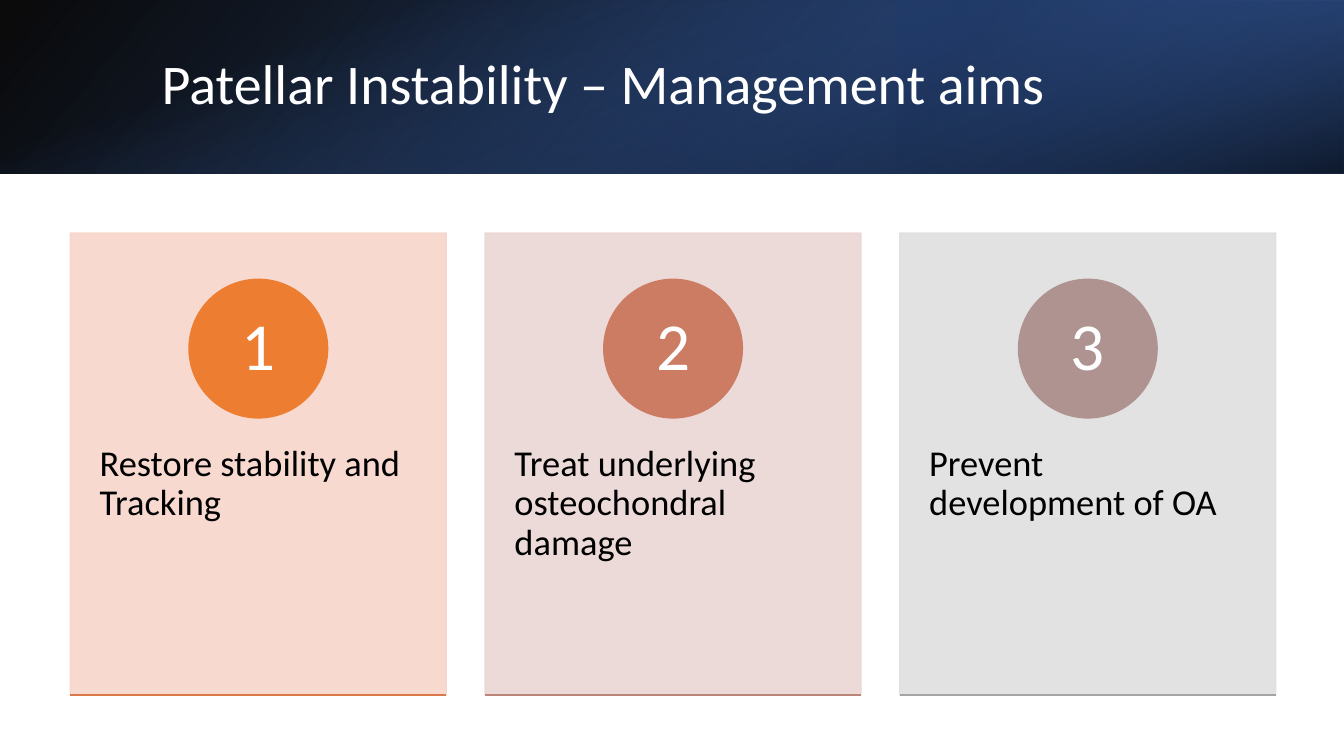
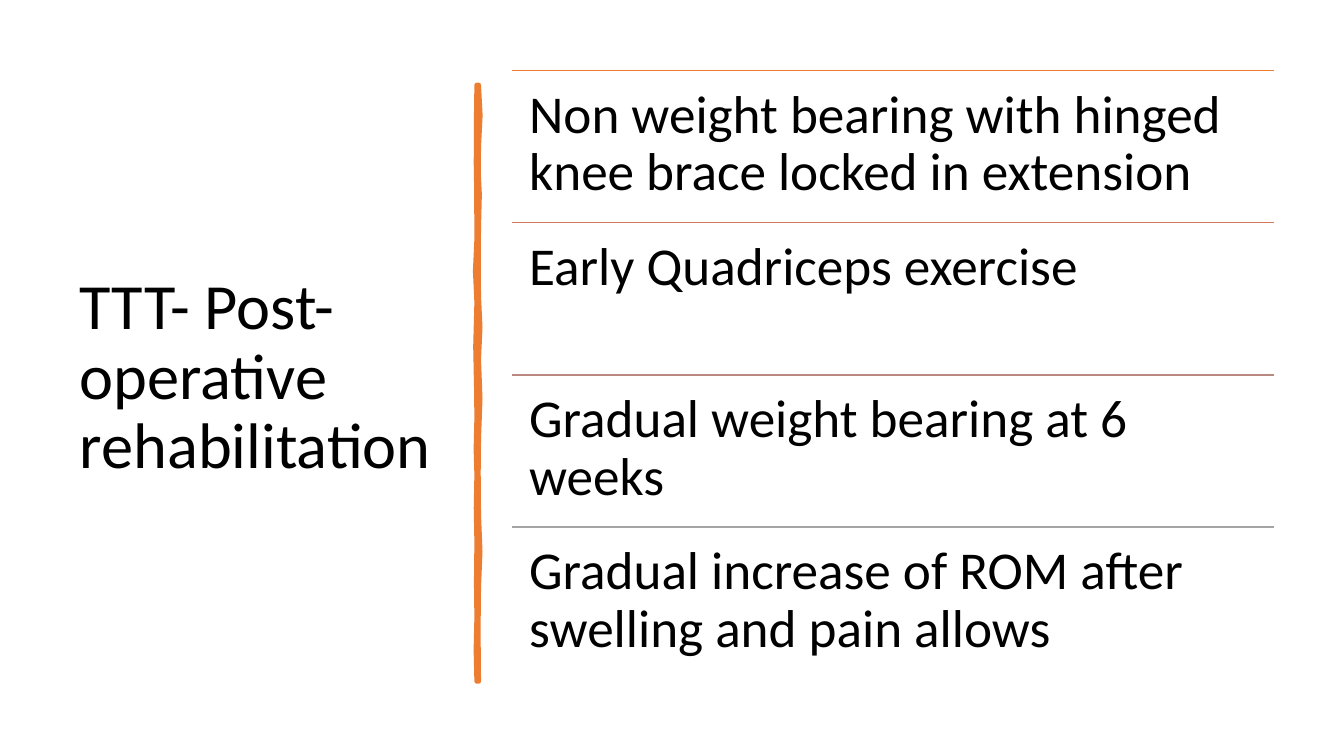
from lxml.etree import SubElement as Sub
from pptx import Presentation
from pptx.dml.color import RGBColor as RGB
from pptx.enum.shapes import MSO_CONNECTOR as Conn, MSO_SHAPE as Kind
from pptx.enum.text import MSO_ANCHOR as Anchor, PP_ALIGN as Align
from pptx.oxml.ns import qn
from pptx.util import Pt

PX = 9525
WIDE, HIGH = 1280, 720
HUES = {
    "black": "000000", "white": "FFFFFF", "orange": "ED7D31",
    "navy": "1F3864", "blue": "2F5496", "sky": "4472C4",
    "peach": "F7D5CB", "rose": "EBD6D4", "mist": "DFDFDF",
    "clay": "CB7C63", "mauve": "AF9390", "grey": "A4A4A4",
    "rust": "DB784A", "brick": "BC857A", "terra": "D07A5B", "dusk": "B88881",
}
FONT = "Calibri"
TITLE = {"anchor": Anchor.MIDDLE, "pads": (10, 5, 10, 5)}

CARDS = [
    ("Restore stability and Tracking", "peach", "orange", "rust"),
    ("Treat underlying osteochondral damage", "rose", "clay", "brick"),
    ("Prevent development of OA", "mist", "mauve", "grey"),
]
STEPS = [
    ("Non weight bearing with hinged knee brace locked in extension", "orange"),
    ("Early Quadriceps exercise", "terra"),
    ("Gradual weight bearing at 6 weeks", "dusk"),
    ("Gradual increase of ROM after swelling and pain allows", "grey"),
]
# Brush edges: (y in px, sway in tenths of a px)
RIGHT = [(0, 0), (29, 15), (59, 0), (84, -2), (104, 8), (136, 0), (169, -2),
         (201, 0), (231, 14), (261, 0), (299, 14), (337, 0), (369, -3),
         (409, 0), (444, 14), (479, 0), (519, -4), (568, 0)]
LEFT = [(568, 0), (538, -7), (507, 0), (474, -4), (436, 0), (403, -6),
        (371, 0), (347, -7), (317, 0), (290, -3), (249, -11), (207, 0),
        (177, -14), (147, 0), (99, -2), (76, -6), (39, -5), (0, 0)]


def hue(name):
    return RGB.from_string(HUES[name])


def emu(*box):
    return [v * PX for v in box]


def write(shape, text, size, color="black", anchor=Anchor.TOP,
          align=Align.LEFT, pads=(0, 0, 0, 0)):
    frame = shape.text_frame
    sides = ("margin_left", "margin_top", "margin_right", "margin_bottom")
    form = dict(zip(sides, emu(*pads)), word_wrap=True, vertical_anchor=anchor)
    para = frame.paragraphs[0]
    run = para.add_run()
    run.text = text
    run.font.color.rgb = hue(color)
    for part, vals in (
        (frame, form),
        (para, {"alignment": align, "line_spacing": 0.9}),
        (run.font, {"name": FONT, "size": Pt(size)}),
    ):
        for key, val in vals.items():
            setattr(part, key, val)


def label(slide, box, text, size, **form):
    write(slide.shapes.add_textbox(*emu(*box)), text, size, **form)


def paint(shape, fill, width=1, alpha=100):
    shape.shadow.inherit = False
    shape.fill.solid()
    shape.fill.fore_color.rgb = hue(fill)
    shape.line.color.rgb = hue(fill)
    shape.line.width = Pt(width)
    if alpha < 100:
        for node in shape._element.spPr.iter(qn("a:srgbClr")):
            Sub(node, qn("a:alpha"), val=str(alpha * 1000))


def rule(slide, x, y, w, color):
    line = slide.shapes.add_connector(Conn.STRAIGHT, *emu(x, y, x + w, y))
    line.line.color.rgb = hue(color)
    line.line.width = Pt(1)
    Sub(line._element.spPr, qn("a:effectLst"))


def fade(slide, box, stops, angle, turn=0, flip=False):
    """Rectangle with a see-through gradient; stops are (place, hue, alpha)."""
    shape = slide.shapes.add_shape(Kind.RECTANGLE, *emu(*box))
    shape.shadow.inherit = False
    shape.line.fill.background()
    shape.rotation = turn
    props = shape._element.spPr
    if flip:
        props.xfrm.set("flipH", "1")
    grad = props.makeelement(qn("a:gradFill"))
    marks = Sub(grad, qn("a:gsLst"))
    for place, name, alpha in stops:
        stop = Sub(marks, qn("a:gs"), pos=str(place * 1000))
        tint = Sub(stop, qn("a:srgbClr"), val=HUES[name])
        Sub(tint, qn("a:alpha"), val=str(alpha * 1000))
    Sub(grad, qn("a:lin"), ang=str(angle * 60000), scaled="0")
    props.find(qn("a:prstGeom")).addnext(grad)


def band(slide, x, y, w, h, text):
    # Three layers of colour; the last is a turned upright strip
    fade(slide, (x, y, w, h), [(0, "black", 96), (100, "blue", 100)],
         140, flip=True)
    third = w // 3
    fade(slide, (x + w - third, y, third, h),
         [(0, "navy", 68), (19, "navy", 68), (100, "sky", 79)],
         320, turn=180, flip=True)
    shift = (w - h) // 2
    fade(slide, (x + shift, y - shift, h, w),
         [(0, "sky", 0), (23, "sky", 0), (99, "black", 74), (100, "black", 74)],
         340, turn=90)
    label(slide, (x + 144, y + 36, 1054, 92), text, 40, color="white", **TITLE)


def card(slide, x, y, w, h, num, text, back, disc, foot):
    panel = slide.shapes.add_shape(Kind.RECTANGLE, *emu(x, y, w, h))
    paint(panel, back, alpha=90)
    label(slide, (x, y + 167, w, 264), text, 26, pads=(28, 35, 30, 35))
    size = 132
    dot = slide.shapes.add_shape(
        Kind.OVAL, *emu(x + (w - size) // 2, y + 44, size, size))
    paint(dot, disc)
    write(dot, str(num), 48, "white", Anchor.MIDDLE, Align.CENTER)
    rule(slide, x, y + h, w, foot)


def brush(slide, x, y, w):
    pts = [(w * 10 + sway, down * 10) for down, sway in RIGHT]
    pts += [(sway, down * 10) for down, sway in LEFT]
    pen = slide.shapes.build_freeform(*pts[0], scale=PX / 10)
    pen.add_line_segments(pts[1:], close=True)
    shape = pen.convert_to_shape(*emu(x, y))
    paint(shape, "orange", 3.25)
    Sub(shape.line._get_or_add_ln(), qn("a:round"))


def steps(slide, x, y, w, h):
    row = h // len(STEPS)
    for i, (text, color) in enumerate(STEPS):
        top = y + i * row
        rule(slide, x, top, w, color)
        label(slide, (x, top, w, row), text, 38, pads=(16, 16, 16, 16))


def aims(slide):
    band(slide, 0, 0, WIDE, 165, "Patellar Instability – Management aims")
    wide, gap = 358, 37
    for i, parts in enumerate(CARDS):
        card(slide, 67 + i * (wide + gap), 222, wide, 440, i + 1, *parts)


def rehab(slide):
    label(slide, (66, 67, 359, 587), "TTT- Post-operative rehabilitation",
          46, **TITLE)
    brush(slide, 454, 81, 2)
    steps(slide, 488, 67, 725, 580)


def main():
    deck = Presentation()
    deck.slide_width, deck.slide_height = emu(WIDE, HIGH)
    for build in (aims, rehab):
        build(deck.slides.add_slide(deck.slide_layouts[6]))
    deck.save("out.pptx")


if __name__ == "__main__":
    main()
